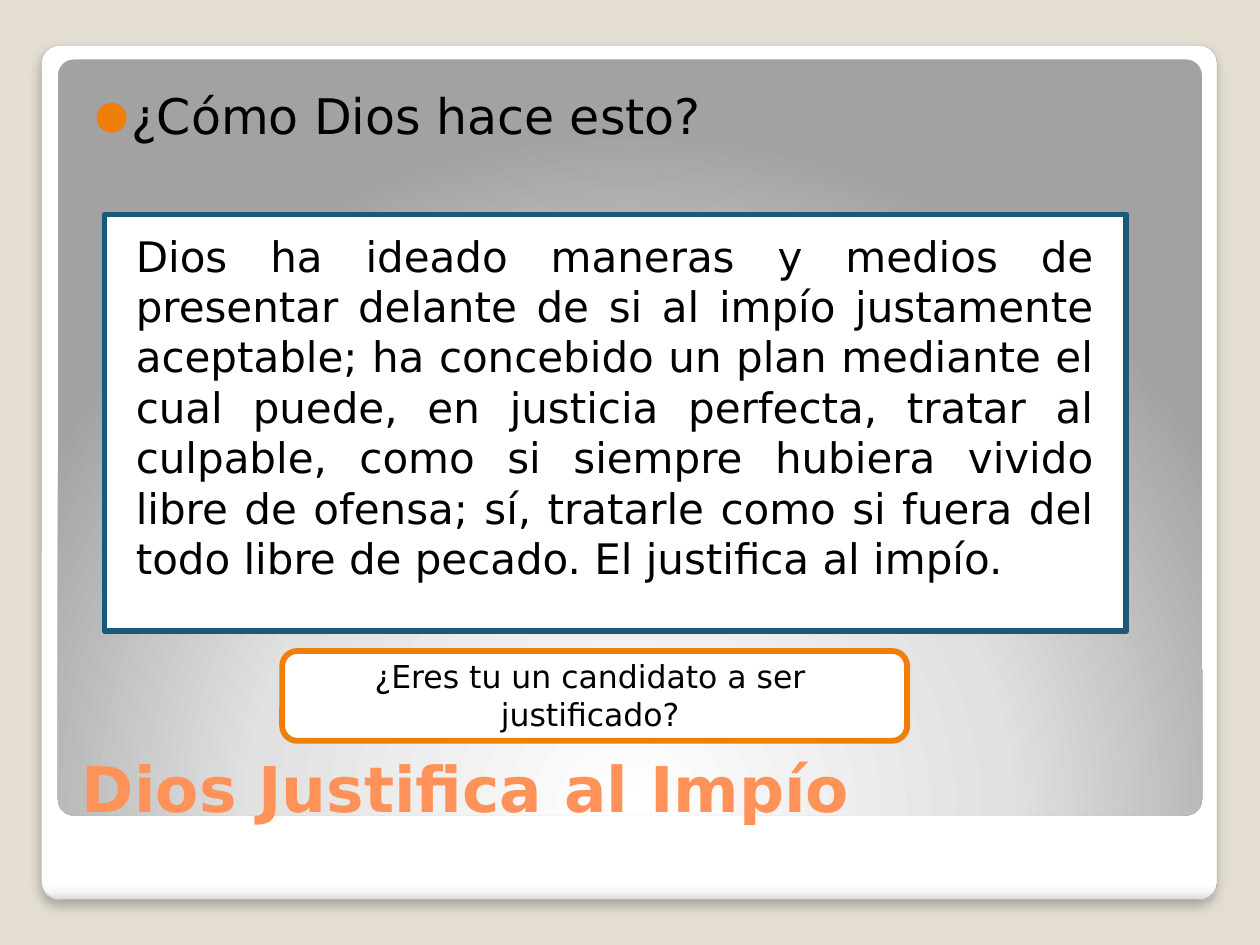
from lxml.etree import SubElement
from pptx import Presentation
from pptx.dml.color import RGBColor
from pptx.enum.shapes import MSO_SHAPE as Shape
from pptx.enum.text import MSO_ANCHOR as Anchor, PP_ALIGN as Align
from pptx.oxml import parse_xml
from pptx.oxml.ns import nsdecls, qn
from pptx.util import Inches, Pt

COLORS = {
    "background": "E3DED1", "white": "FFFFFF", "black": "000000",
    "edge": "A4A4A4", "blue": "1B587C", "orange": "F07F09", "title": "FF9258",
}
RGB = {name: RGBColor.from_string(value) for name, value in COLORS.items()}
FONT = "DejaVu Sans"

deck = Presentation()
deck.slide_width, deck.slide_height = Inches(10), Inches(7.5)
column, row = deck.slide_width / 100, deck.slide_height / 100
slide = deck.slides.add_slide(deck.slide_layouts[5])
slide.background.fill.solid()
slide.background.fill.fore_color.rgb = RGB["background"]


def place(left, top, width, height):
    return [round(n) for n in (left * column, top * row, width * column, height * row)]


def write(frame, text, size, color, align, bold=False, anchor=Anchor.TOP, insets=(0.1, 0.05)):
    left, top = map(Inches, insets)
    frame_format = {
        "word_wrap": True, "vertical_anchor": anchor, "margin_left": left,
        "margin_top": top, "margin_right": Inches(0.1), "margin_bottom": Inches(0.05),
    }
    for key, value in frame_format.items():
        setattr(frame, key, value)
    paragraph = frame.paragraphs[0]
    paragraph.alignment = align
    run = paragraph.add_run()
    run.text = text
    for key, value in {"name": FONT, "size": Pt(size), "bold": bold}.items():
        setattr(run.font, key, value)
    run.font.color.rgb = RGB[color]
    return paragraph


panels = [
    ((3.3, 4.8, 93.3, 90.4), Shape.ROUNDED_RECTANGLE, 0.021, "edge", 0.16,
     [(0, "FFFFFF"), (98, "FFFFFF"), (99, "F7F7F7"), (100, "DADADA")],
     '<a:lin ang="5400000" scaled="0"/>'),
    ((4.6, 6.3, 90.8, 80), Shape.ROUNDED_RECTANGLE, 0.021, None, 0,
     [(0, "FFFFFF"), (55, "E1E1E1"), (100, "A2A2A2")],
     '<a:path path="circle"><a:fillToRect l="50000" t="175000" r="50000" b="-75000"/></a:path>'),
    ((8.3, 22.7, 81.1, 44.1), Shape.RECTANGLE, None, "blue", 3.35, None, None),
    ((22.4, 68.9, 49.6, 9.5), Shape.ROUNDED_RECTANGLE, 0.1667, "orange", 3.35, None, None),
]
drawn = []
for area, outline, rounding, edge, weight, stops, direction in panels:
    panel = slide.shapes.add_shape(outline, *place(*area))
    panel.shadow.inherit = False
    if rounding:
        panel.adjustments[0] = rounding
    if edge:
        panel.line.color.rgb = RGB[edge]
        panel.line.width = Pt(weight)
    else:
        panel.line.fill.background()
    panel.fill.solid()
    panel.fill.fore_color.rgb = RGB["white"]
    if stops:
        marks = "".join(
            f'<a:gs pos="{share * 1000}"><a:srgbClr val="{color}"/></a:gs>'
            for share, color in stops
        )
        gradient = parse_xml(
            f'<a:gradFill {nsdecls("a")} rotWithShape="1">'
            f'<a:gsLst>{marks}</a:gsLst>{direction}</a:gradFill>'
        )
        properties = panel.element.spPr
        properties.replace(properties.find(qn("a:solidFill")), gradient)
    drawn.append(panel)

effects = drawn[0].element.spPr.find(qn("a:effectLst"))
effects.append(parse_xml(
    f'<a:outerShdw {nsdecls("a")} blurRad="{Pt(6)}" dist="{Pt(4)}" dir="5400000" '
    f'algn="t" rotWithShape="0"><a:srgbClr val="{COLORS["black"]}">'
    '<a:alpha val="25000"/></a:srgbClr></a:outerShdw>'
))

title = slide.shapes.title
title.left, title.top, title.width, title.height = place(5.5, 72.7, 89.5, 15.3)
write(title.text_frame, "Dios Justifica al Impío", 36, "title", Align.LEFT,
      bold=True, anchor=Anchor.BOTTOM)
title.element.getparent().append(title.element)

texts = [
    ((5.5, 7.7, 89.5, 11.9), "¿Cómo Dios hace esto?", 28, Align.LEFT, (0.2, 0.1)),
    ((9.8, 23.7, 78, 43.1),
     "Dios ha ideado maneras y medios de presentar delante de si al impío justamente "
     "aceptable; ha concebido un plan mediante el cual puede, en justicia perfecta, "
     "tratar al culpable, como si siempre hubiera vivido libre de ofensa; sí, tratarle "
     "como si fuera del todo libre de pecado. El justifica al impío.",
     24, Align.JUSTIFY, (0.1, 0.05)),
    ((24, 68.9, 45.7, 9.5), "¿Eres tu un candidato a ser justificado?", 18,
     Align.CENTER, (0.1, 0.05)),
]
paragraphs = []
for area, text, size, align, insets in texts:
    frame = slide.shapes.add_textbox(*place(*area)).text_frame
    paragraphs.append(write(frame, text, size, "black", align, insets=insets))

question = paragraphs[0]
question.space_before = Pt(2.5)
bullet = question._p.get_or_add_pPr()
bullet.set("marL", str(Inches(0.29)))
bullet.set("indent", str(-Inches(0.29)))
SubElement(SubElement(bullet, qn("a:buClr")), qn("a:srgbClr"), val=COLORS["orange"])
SubElement(bullet, qn("a:buSzPct"), val="80000")
SubElement(bullet, qn("a:buFont"), typeface=FONT)
SubElement(bullet, qn("a:buChar"), char="●")

deck.save("out.pptx")
